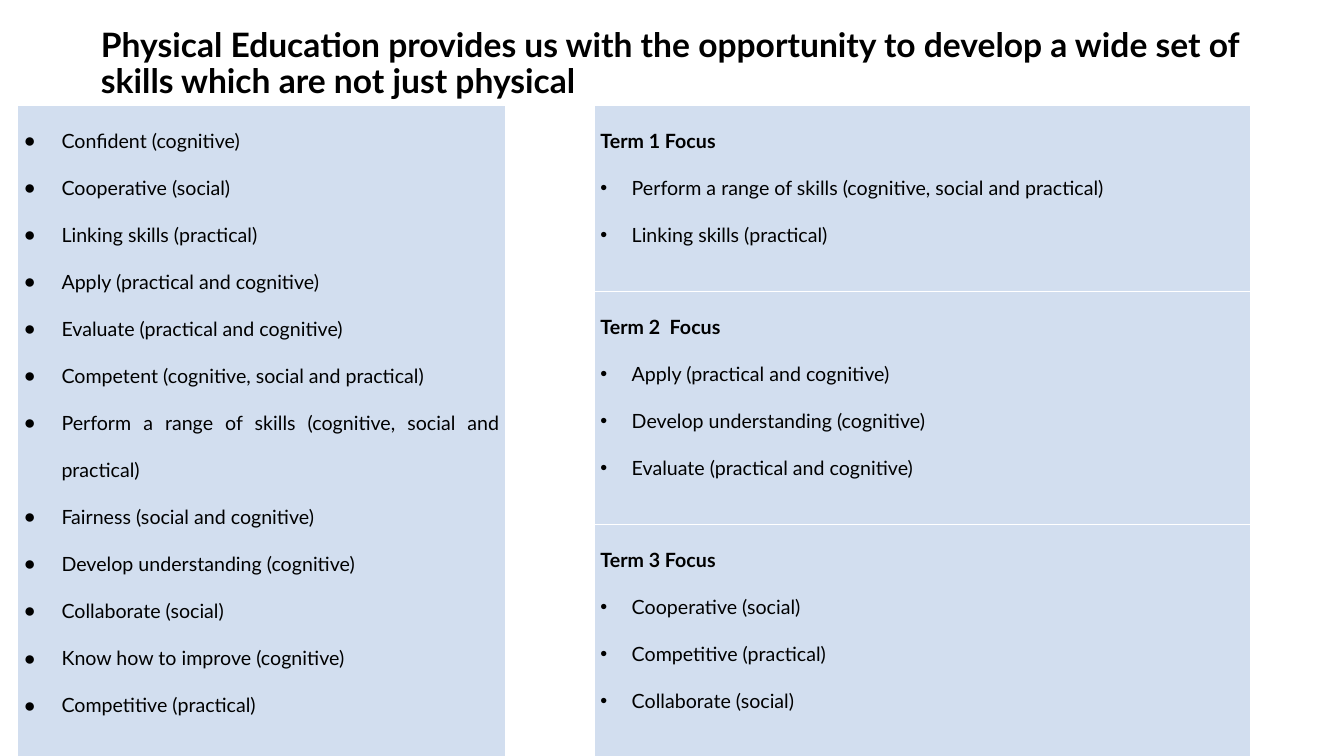
from dataclasses import dataclass

from lxml.etree import SubElement
from pptx import Presentation
from pptx.dml.color import RGBColor
from pptx.enum.text import MSO_ANCHOR, MSO_AUTO_SIZE, PP_ALIGN
from pptx.oxml.ns import qn
from pptx.util import Cm, Pt


@dataclass(frozen=True)
class Theme:
    font: str = "Lato"
    text: str = "000000"
    panel: str = "D2DEEF"
    border: str = "FFFFFF"
    title_size: int = 24
    body_size: int = 14


theme = Theme()


def set_font(p, size, bold):
    p.font.name = theme.font
    p.font.size = Pt(size)
    p.font.bold = bold
    p.font.color.rgb = RGBColor.from_string(theme.text)


def add_panel(s, left, top, width, height, heading, items, bullet, indent):
    """Add a one-cell table with an optional heading above a bulleted list."""
    table = s.shapes.add_table(1, 1, left, top, width, height).table
    table.first_row = table.horz_banding = False
    cell = table.cell(0, 0)
    cell.margin_left = cell.margin_right = Cm(0.16)
    cell.margin_top = cell.margin_bottom = 0
    cell.vertical_anchor = MSO_ANCHOR.TOP

    tc_pr = cell._tc.get_or_add_tcPr()
    for side in ("lnL", "lnR", "lnT", "lnB"):
        line = SubElement(tc_pr, qn(f"a:{side}"), w=str(Pt(1)))
        fill = SubElement(line, qn("a:solidFill"))
        SubElement(fill, qn("a:srgbClr"), val=theme.border)
    cell.fill.solid()
    cell.fill.fore_color.rgb = RGBColor.from_string(theme.panel)

    tf = cell.text_frame
    lines = [heading, *items] if heading else items
    for i, text in enumerate(lines):
        p = tf.add_paragraph() if i else tf.paragraphs[0]
        p.text = text
        p.alignment = PP_ALIGN.JUSTIFY
        p.line_spacing = 2.0
        if text != heading:
            p_pr = p._p.get_or_add_pPr()
            p_pr.set("marL", str(indent))
            p_pr.set("indent", str(-indent))
            SubElement(p_pr, qn("a:buFont"), typeface="Arial")
            SubElement(p_pr, qn("a:buChar"), char=bullet)
        set_font(p, theme.body_size, text == heading)


prs = Presentation()
prs.slide_width, prs.slide_height = Cm(33.87), Cm(19.05)
s = prs.slides.add_slide(prs.slide_layouts[5])

title = s.shapes.title
title.left, title.top, title.width, title.height = Cm(2.29), Cm(0.58), Cm(29.21), Cm(3.68)
tf = title.text_frame
tf.word_wrap = True
tf.auto_size = MSO_AUTO_SIZE.NONE
tf.vertical_anchor = MSO_ANCHOR.TOP
tf.text = ("Physical Education provides us with the opportunity to develop "
           "a wide set of skills which are not just physical")
p = tf.paragraphs[0]
p.alignment = PP_ALIGN.LEFT
p.line_spacing = 0.9
set_font(p, theme.title_size, True)

skills = [
    "Confident (cognitive)",
    "Cooperative (social)",
    "Linking skills (practical)",
    "Apply (practical and cognitive)",
    "Evaluate (practical and cognitive)",
    "Competent (cognitive, social and practical)",
    "Perform a range of skills (cognitive, social and practical)",
    "Fairness (social and cognitive)",
    "Develop understanding (cognitive)",
    "Collaborate (social)",
    "Know how to improve (cognitive)",
    "Competitive (practical)",
]
add_panel(s, Cm(0.44), Cm(2.65), Cm(12.31), Cm(16.59), None, skills, "●", Cm(0.95))

terms = [
    (Cm(2.65), Cm(4.75), "Term 1 Focus", [
        "Perform a range of skills (cognitive, social and practical)",
        "Linking skills (practical)",
    ]),
    (Cm(7.35), Cm(5.92), "Term 2  Focus", [
        "Apply (practical and cognitive)",
        "Develop understanding (cognitive)",
        "Evaluate (practical and cognitive)",
    ]),
    (Cm(13.22), Cm(5.92), "Term 3 Focus", [
        "Cooperative (social)",
        "Competitive (practical)",
        "Collaborate (social)",
    ]),
]
for top, height, heading, items in terms:
    add_panel(s, Cm(14.97), top, Cm(16.54), height, heading, items, "•", Cm(0.79))

prs.save("out.pptx")
